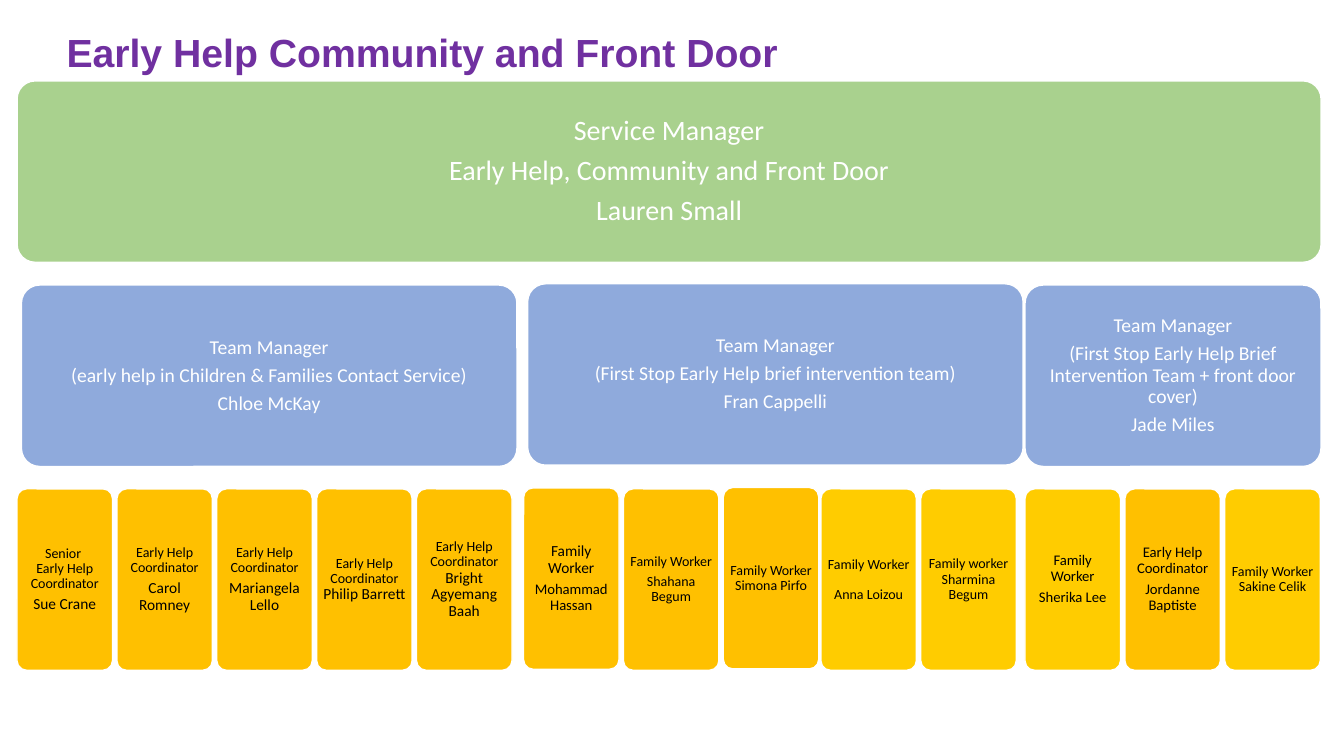
from dataclasses import dataclass

from pptx import Presentation
from pptx.dml.color import RGBColor
from pptx.enum.shapes import MSO_SHAPE
from pptx.enum.text import MSO_ANCHOR, MSO_AUTO_SIZE, PP_ALIGN
from pptx.slide import Slide
from pptx.util import Pt

GREEN, BLUE, AMBER, YELLOW = "A9D18E", "8FAADC", "FFC000", "FFCC00"
WHITE, BLACK, PURPLE = "FFFFFF", "000000", "7030A0"
BOX_H = 129.6
CARD_W, CARD_TOP, PITCH = 68.2, 349.2, 71.34


@dataclass
class Line:
    text: str
    size: float
    name: str = ""  # follows the text at 11 points
    after: float = 0.35  # gap below, as a share of the size


@dataclass
class Box:
    left: float
    top: float
    width: float
    fill: str
    ink: str
    lines: list[Line]


@dataclass
class Card:
    lines: list[Line]
    fill: str = AMBER
    rise: float = 0


def color(code: str) -> RGBColor:
    return RGBColor.from_string(code)


def draw_box(slide: Slide, box: Box) -> None:
    shape = slide.shapes.add_shape(
        MSO_SHAPE.ROUNDED_RECTANGLE,
        Pt(box.left), Pt(box.top), Pt(box.width), Pt(BOX_H))
    shape.adjustments[0] = 0.1
    shape.shadow.inherit = False
    shape.fill.solid()
    shape.fill.fore_color.rgb = color(box.fill)
    shape.line.color.rgb = color(WHITE)
    shape.line.width = Pt(1)
    frame = shape.text_frame
    frame.word_wrap = True
    frame.vertical_anchor = MSO_ANCHOR.MIDDLE
    inset = Pt(box.lines[0].size * 0.25)
    frame.margin_left = frame.margin_right = inset
    frame.margin_top = frame.margin_bottom = inset
    for i, line in enumerate(box.lines):
        para = frame.add_paragraph() if i else frame.paragraphs[0]
        para.text = line.text
        para.alignment = PP_ALIGN.CENTER
        para.line_spacing = 0.9
        para.space_after = Pt(line.size * line.after)
        para.font.size = Pt(line.size)
        para.font.name = "Calibri"
        para.font.color.rgb = color(box.ink)
        if line.name:
            run = para.add_run()
            run.text = line.name
            run.font.size = Pt(11)


def draw_title(slide: Slide, text: str) -> None:
    title = slide.shapes.title
    title.left, title.top = Pt(40.3), Pt(14.4)
    title.width, title.height = Pt(828), Pt(43.2)
    frame = title.text_frame
    frame.auto_size = MSO_AUTO_SIZE.NONE
    frame.word_wrap = True
    frame.vertical_anchor = MSO_ANCHOR.BOTTOM
    para = frame.paragraphs[0]
    para.text = text
    para.alignment = PP_ALIGN.LEFT
    para.line_spacing = 0.9
    para.font.size = Pt(28)
    para.font.name = "Arial"
    para.font.bold = True
    para.font.color.rgb = color(PURPLE)


def leader(left: float, top: float, width: float, fill: str,
           size: float, *texts: str) -> Box:
    return Box(left, top, width, fill, WHITE, [Line(t, size) for t in texts])


LEADERS = [
    leader(12.2, 57.8, 931.5, GREEN, 20, "Service Manager",
           "Early Help, Community and Front Door", "Lauren Small"),
    leader(15.3, 203.6, 354, BLUE, 14, "Team Manager",
           "(early help in Children & Families Contact Service)",
           "Chloe McKay"),
    leader(376.9, 202.7, 354, BLUE, 14, "Team Manager",
           "(First Stop Early Help brief intervention team)",
           "Fran Cappelli"),
    leader(732.2, 203.6, 211.4, BLUE, 14, "Team Manager",
           "(First Stop Early Help Brief Intervention Team + front door cover)",
           "Jade Miles"),
]

# Left edge of each run of evenly spaced cards
STAFF = {
    12.2: [
        Card([Line("Senior \vEarly Help Coordinator", 10),
              Line("Sue Crane", 11)]),
        Card([Line("Early Help Coordinator", 10), Line("Carol Romney", 11)]),
        Card([Line("Early Help Coordinator", 10),
              Line("Mariangela Lello", 11)]),
        Card([Line("Early Help Coordinator ", 10, "Philip Barrett")]),
        Card([Line("Early Help Coordinator ", 10, "Bright Agyemang Baah")]),
    ],
    374: [
        Card([Line("Family Worker", 11), Line("Mohammad Hassan", 10.5)],
             rise=0.7),
        Card([Line("Family Worker", 10), Line("Shahana Begum", 10)]),
        Card([Line("Family Worker Simona Pirfo", 10)], rise=1),
    ],
    586.4: [
        Card([Line("Family Worker", 10, after=1.05), Line("Anna Loizou", 10)],
             YELLOW),
        Card([Line("Family worker Sharmina Begum", 10)], YELLOW),
    ],
    732.2: [
        Card([Line("Family Worker", 10.5), Line("Sherika Lee", 10.5)], YELLOW),
        Card([Line("Early Help Coordinator", 10.5),
              Line("Jordanne Baptiste", 10.5)]),
        Card([Line("Family Worker Sakine Celik", 10)], YELLOW),
    ],
}


def main() -> None:
    deck = Presentation()
    deck.slide_width, deck.slide_height = Pt(960), Pt(540)
    slide = deck.slides.add_slide(deck.slide_layouts[5])
    draw_title(slide, "Early Help Community and Front Door")
    for box in LEADERS:
        draw_box(slide, box)
    for left, cards in STAFF.items():
        for i, card in enumerate(cards):
            draw_box(slide, Box(left + i * PITCH, CARD_TOP - card.rise,
                                CARD_W, card.fill, BLACK, card.lines))
    deck.save("out.pptx")


if __name__ == "__main__":
    main()
